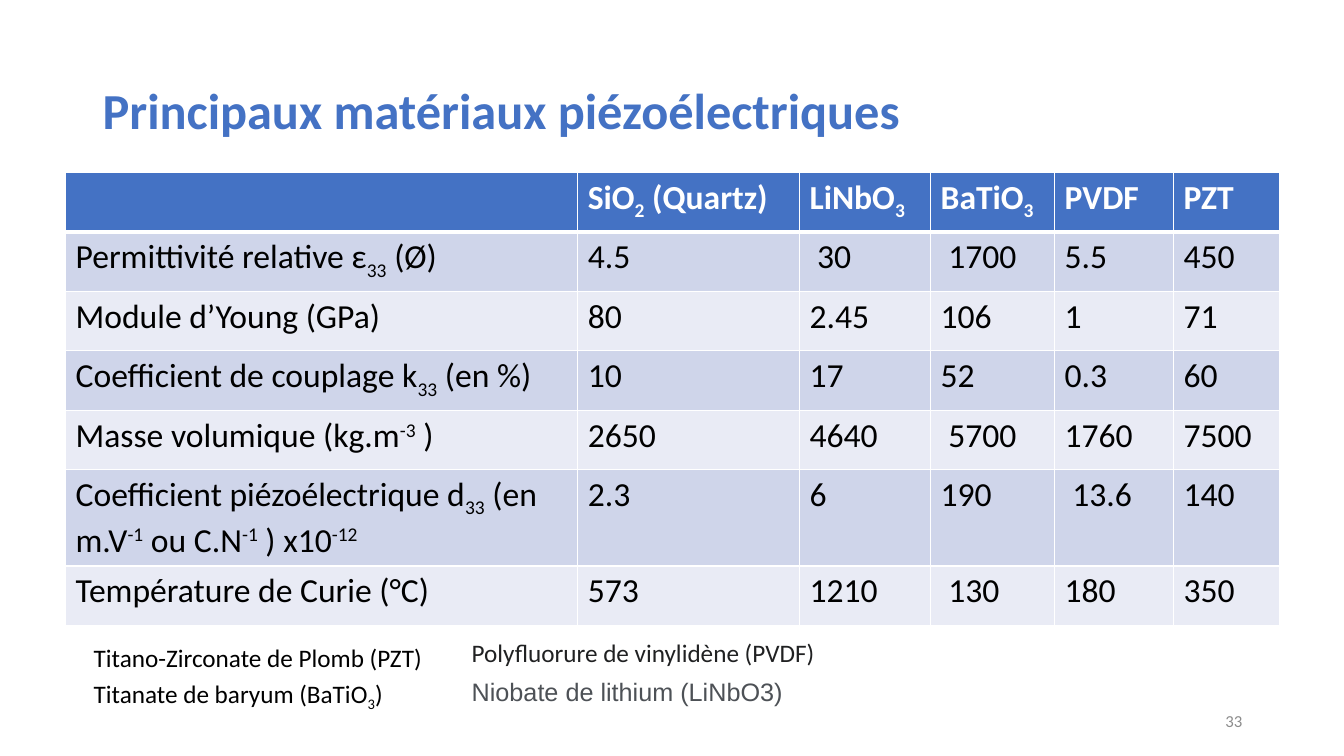
from lxml import etree
from pptx import Presentation
from pptx.dml.color import RGBColor
from pptx.enum.text import MSO_ANCHOR as Anchor, PP_ALIGN as Align
from pptx.oxml.ns import qn
from pptx.util import Inches, Pt

# Content: "|" separates spans, "_" lowers a span and "^" raises it
TITLE = "Principaux matériaux piézoélectriques"
PAGE_NUMBER = "33"
MATERIALS = [
    ("", "SiO|_2| (Quartz)", "LiNbO|_3", "BaTiO|_3", "PVDF", "PZT"),
    ("Permittivité relative ε|_33| (Ø)", "4.5", " 30", " 1700", "5.5", "450"),
    ("Module d’Young (GPa)", "80", "2.45", "106", "1", "71"),
    ("Coefficient de couplage k|_33| (en %)", "10", "17", "52", "0.3", "60"),
    ("Masse volumique (kg.m|^-3| )", "2650", "4640", " 5700", "1760", "7500"),
    ("Coefficient piézoélectrique d|_33| (en m.V|^-1| ou C.N|^-1| ) x10|^-12",
     "2.3", "6", "190", " 13.6", "140"),
    ("Température de Curie (°C)", "573", "1210", " 130", "180", "350"),
]
COLUMN_WIDTHS = (5.08, 2.2, 1.3, 1.23, 1.18, 1.05)
ROW_HEIGHT = 0.59

BLUE = RGBColor(0x44, 0x72, 0xC4)
BAND_DARK = RGBColor(0xCF, 0xD5, 0xEA)
BAND_LIGHT = RGBColor(0xE9, 0xEB, 0xF5)
WHITE = RGBColor(0xFF, 0xFF, 0xFF)
BLACK = RGBColor(0, 0, 0)
GREY = RGBColor(0x8C, 0x8C, 0x8C)
INK = RGBColor(0x20, 0x21, 0x22)
SLATE = RGBColor(0x4D, 0x51, 0x56)

# Abbreviations: text, left, top, width, font, colour
ABBREVIATIONS = [
    ("Titano-Zirconate de Plomb (PZT)", 0.83, 6.32, 6.67, "Calibri", BLACK),
    ("Titanate de baryum (BaTiO|_3|)", 0.83, 6.68, 6.67, "Calibri", BLACK),
    ("Polyfluorure de vinylidène (PVDF)", 4.58, 6.27, 6.61, "Calibri", INK),
    ("Niobate de lithium (LiNbO3)", 4.58, 6.66, 7.12, "Arial", SLATE),
]
BASELINES = {"_": "-25000", "^": "30000"}


def write(para, text, size, color, bold=False, font="Calibri"):
    for part in text.split("|"):
        baseline = BASELINES.get(part[:1])
        span = para.add_run()
        span.text = part[1:] if baseline else part
        span.font.name, span.font.size = font, Pt(size)
        span.font.bold = bold
        span.font.color.rgb = color
        if baseline:
            span.font._element.set("baseline", baseline)


def add_text(page, text, left, top, width, height, size, color,
             anchor=Anchor.TOP, **style):
    box = page.shapes.add_textbox(Inches(left), Inches(top), Inches(width), Inches(height))
    box.text_frame.word_wrap = True
    box.text_frame.vertical_anchor = anchor
    para = box.text_frame.paragraphs[0]
    write(para, text, size, color, **style)
    return para


def set_borders(cell, top, bottom):
    properties = cell._tc.get_or_add_tcPr()
    for side, width in (("L", 1), ("R", 1), ("T", top), ("B", bottom)):
        line = etree.SubElement(properties, qn(f"a:ln{side}"), w=str(Pt(width)))
        fill = etree.SubElement(line, qn("a:solidFill"))
        etree.SubElement(fill, qn("a:srgbClr"), val=str(WHITE))


def add_materials_table(page):
    frame = page.shapes.add_table(
        len(MATERIALS), len(COLUMN_WIDTHS), Inches(0.65), Inches(1.71),
        Inches(sum(COLUMN_WIDTHS)), Inches(ROW_HEIGHT * len(MATERIALS)))
    table = frame.table
    for column, width in zip(table.columns, COLUMN_WIDTHS):
        column.width = Inches(width)
    for r, values in enumerate(MATERIALS):
        table.rows[r].height = Inches(ROW_HEIGHT)
        header = r == 0
        band = BLUE if header else BAND_DARK if r % 2 else BAND_LIGHT
        for c, value in enumerate(values):
            cell = table.cell(r, c)
            # A thicker rule separates the header from the values
            set_borders(cell, top=3 if r == 1 else 1, bottom=3 if header else 1)
            cell.fill.solid()
            cell.fill.fore_color.rgb = band
            para = cell.text_frame.paragraphs[0]
            if value:
                write(para, value, 24, WHITE if header else BLACK, bold=header)
            else:
                para.font.size = Pt(24)


def main():
    deck = Presentation()
    deck.slide_width, deck.slide_height = Inches(13.33), Inches(7.5)
    page = deck.slides.add_slide(deck.slide_layouts[6])

    # Title and table
    title = add_text(page, TITLE, 0.92, 0.4, 11.5, 1.45, 36, BLUE, Anchor.MIDDLE, bold=True)
    title.line_spacing = 0.9
    add_materials_table(page)

    # Abbreviations and page number
    for text, left, top, width, font, color in ABBREVIATIONS:
        add_text(page, text, left, top, width, 0.4, 18, color, font=font)
    number = add_text(page, PAGE_NUMBER, 9.42, 6.95, 3, 0.4, 12, GREY, Anchor.MIDDLE)
    number.alignment = Align.RIGHT

    deck.save("out.pptx")


if __name__ == "__main__":
    main()
